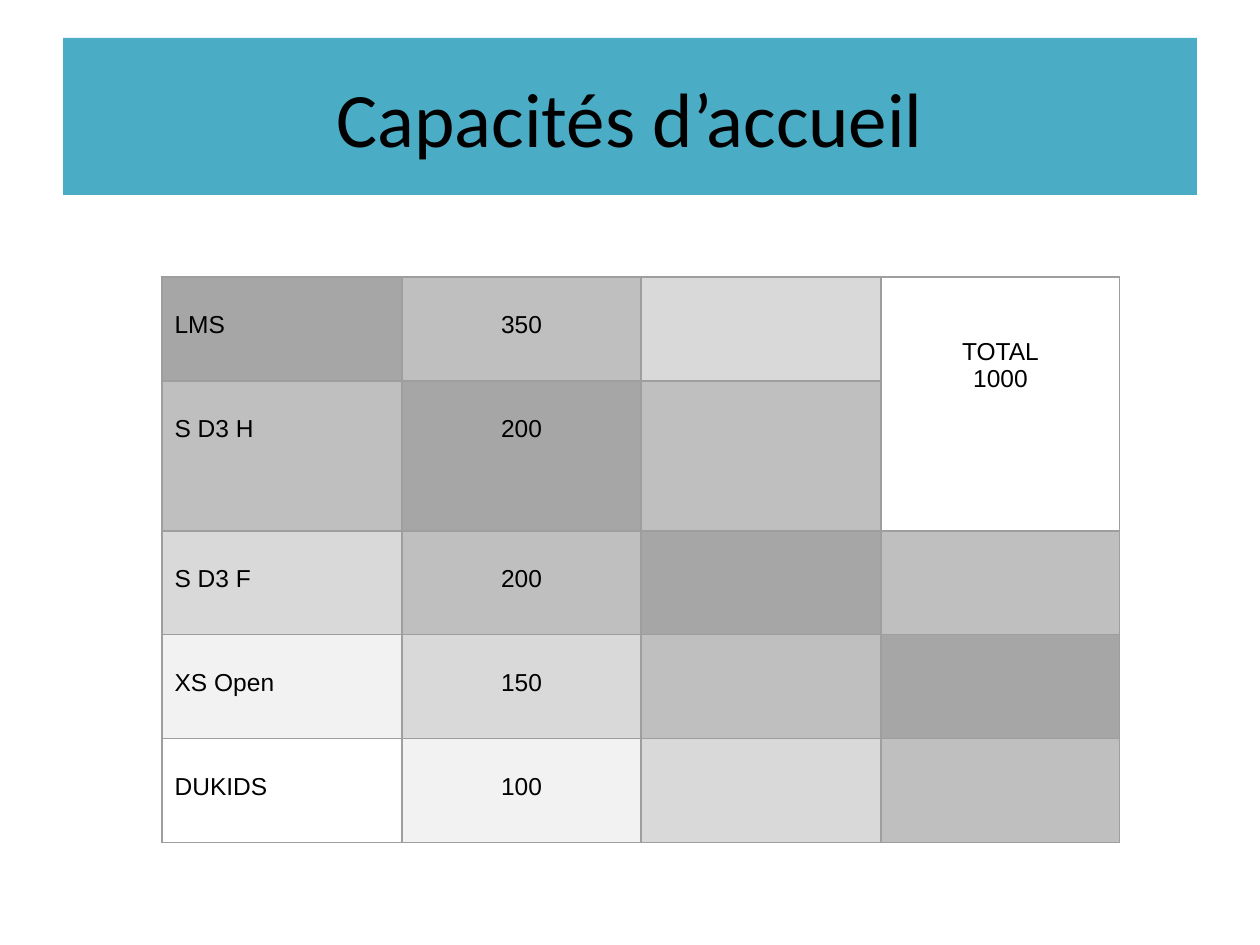
"""Build a slide with a title band and a table of venue capacities."""
from lxml import etree
from pptx import Presentation
from pptx.dml.color import RGBColor
from pptx.enum.text import MSO_ANCHOR, PP_ALIGN
from pptx.oxml.ns import qn
from pptx.util import Pt

PX = 914400 // 126
LEFT, CENTER = PP_ALIGN.LEFT, PP_ALIGN.CENTER
MIDDLE = MSO_ANCHOR.MIDDLE
COLUMN_WIDTHS = [240, 239, 240, 239]
ROW_HEIGHTS = [104, 150, 104, 104, 104]
CAPACITIES = [
    ("LMS", "350"),
    ("S D3 H", "200"),
    ("S D3 F", "200"),
    ("XS Open", "150"),
    ("DUKIDS", "100"),
]
SHADES = ["A6A6A6", "BFBFBF", "D9D9D9", "F2F2F2", None]


def color(value):
    return RGBColor.from_string(value)


def add_borders(cell):
    properties = cell._tc.get_or_add_tcPr()
    for side in ("a:lnL", "a:lnR", "a:lnT", "a:lnB"):
        line = etree.SubElement(properties, qn(side), w=str(Pt(0.75)))
        fill = etree.SubElement(line, qn("a:solidFill"))
        etree.SubElement(fill, qn("a:srgbClr"), val="9E9E9E")


deck = Presentation()
deck.slide_width, deck.slide_height = 1260 * PX, 945 * PX
page = deck.slides.add_slide(deck.slide_layouts[5])

title = page.shapes.title
title.left, title.top, title.width, title.height = 63 * PX, 38 * PX, 1134 * PX, 157 * PX
title.fill.solid()
title.fill.fore_color.rgb = color("4BACC6")
title.text_frame.text = "Capacités d’accueil"
title.text_frame.vertical_anchor = MIDDLE
heading = title.text_frame.paragraphs[0]
heading.alignment = CENTER
heading.font.name = "Calibri"
heading.font.size = Pt(44)
heading.font.color.rgb = color("000000")

table = page.shapes.add_table(
    len(ROW_HEIGHTS), len(COLUMN_WIDTHS), 162 * PX, 277 * PX,
    sum(COLUMN_WIDTHS) * PX, sum(ROW_HEIGHTS) * PX,
).table
table.first_row = table.horz_banding = False
for column, width in zip(table.columns, COLUMN_WIDTHS):
    column.width = width * PX
for row, height in zip(table.rows, ROW_HEIGHTS):
    row.height = height * PX

total = table.cell(0, 3)
total.merge(table.cell(1, 3))
total.text = "TOTAL\n1000"
for row_index, texts in enumerate(CAPACITIES):
    for column_index, text in enumerate(texts):
        table.cell(row_index, column_index).text = text

for row_index in range(len(ROW_HEIGHTS)):
    for column_index in range(len(COLUMN_WIDTHS)):
        cell = table.cell(row_index, column_index)
        in_total = column_index == 3 and row_index < 2
        shade = None if in_total else SHADES[abs(row_index - column_index)]
        add_borders(cell)
        if shade:
            cell.fill.solid()
            cell.fill.fore_color.rgb = color(shade)
        else:
            cell.fill.background()
        cell.margin_top = (61 if in_total else 34) * PX
        for para in cell.text_frame.paragraphs:
            para.alignment = CENTER if column_index else LEFT
            para.font.name = "Arial"
            para.font.size = Pt(14)
            para.font.color.rgb = color("000000")

deck.save("out.pptx")
